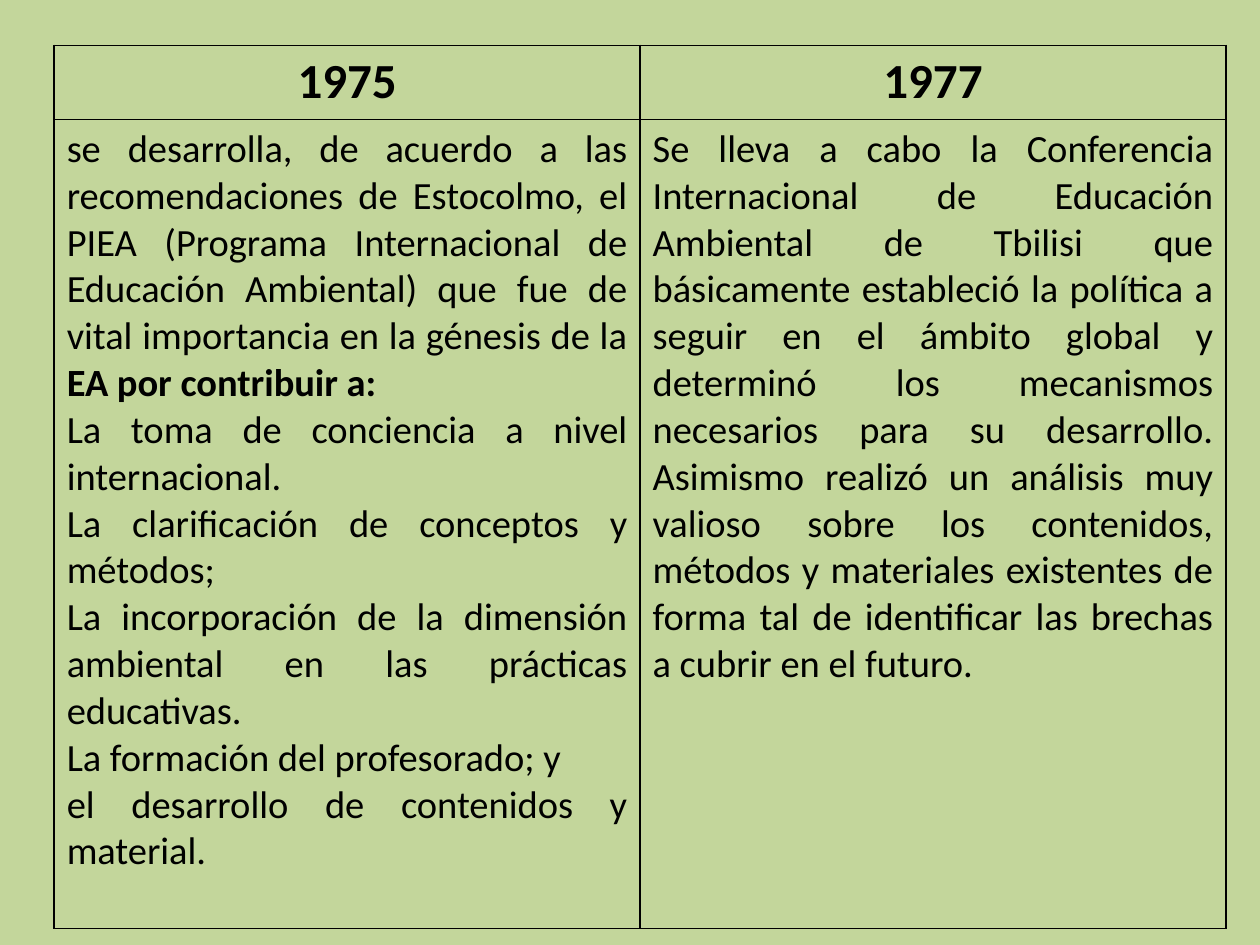
from lxml.etree import SubElement
from pptx import Presentation
from pptx.dml.color import RGBColor
from pptx.enum.text import PP_ALIGN
from pptx.oxml.ns import qn
from pptx.util import Inches, Pt

GREEN = RGBColor(0xC3, 0xD6, 0x9B)
BLACK = RGBColor(0x00, 0x00, 0x00)

HEADINGS = ["1975", "1977"]
# Each cell is a list of paragraphs; each paragraph is a list of (text, bold).
EVENTS_1975 = [
    [("se desarrolla, de acuerdo a las recomendaciones de Estocolmo, el PIEA "
      "(Programa Internacional de Educación Ambiental) que fue de vital "
      "importancia en la génesis de la ", False),
     ("EA por contribuir a:", True)],
    [("La toma de conciencia a nivel internacional.", False)],
    [("La clarificación de conceptos y métodos;", False)],
    [("La incorporación de la dimensión ambiental en las prácticas educativas.", False)],
    [("La formación del profesorado; y", False)],
    [("el desarrollo de contenidos y material.", False)],
]
EVENTS_1977 = [
    [("Se lleva a cabo la Conferencia Internacional de Educación Ambiental de "
      "Tbilisi que básicamente estableció la política a seguir en el ámbito "
      "global y determinó los mecanismos necesarios para su desarrollo. "
      "Asimismo realizó un análisis muy valioso sobre los contenidos, métodos "
      "y materiales existentes de forma tal de identificar las brechas a "
      "cubrir en el futuro.", False)],
]


class TimelineSlide:
    font = "Calibri"
    heading_size = Pt(28)
    body_size = Pt(22)
    border_width = Pt(1)

    def __init__(self, deck):
        self.slide = deck.slides.add_slide(deck.slide_layouts[6])

    def background(self, color):
        fill = self.slide.background.fill
        fill.solid()
        fill.fore_color.rgb = color

    def table(self, left, top, column_widths, row_heights):
        frame = self.slide.shapes.add_table(
            len(row_heights), len(column_widths), Inches(left), Inches(top),
            Inches(sum(column_widths)), Inches(sum(row_heights)))
        table = frame.table
        table.first_row = table.horz_banding = False
        for column, width in zip(table.columns, column_widths):
            column.width = Inches(width)
        for row, height in zip(table.rows, row_heights):
            row.height = Inches(height)
        for cell in table.iter_cells():
            self.borders(cell)
            cell.fill.background()
        return table

    def borders(self, cell):
        properties = cell._tc.get_or_add_tcPr()
        for side in ("a:lnL", "a:lnR", "a:lnT", "a:lnB"):
            line = SubElement(properties, qn(side), w=str(self.border_width))
            fill = SubElement(line, qn("a:solidFill"))
            SubElement(fill, qn("a:srgbClr"), val=str(BLACK))

    def cell_text(self, cell, paragraphs, size, alignment):
        frame = cell.text_frame
        for index, spans in enumerate(paragraphs):
            para = frame.add_paragraph() if index else frame.paragraphs[0]
            para.alignment = alignment
            for text, bold in spans:
                span = para.add_run()
                span.text = text
                span.font.name = self.font
                span.font.size = size
                span.font.bold = bold
                span.font.color.rgb = BLACK


def main():
    deck = Presentation()
    deck.slide_width, deck.slide_height = Inches(10), Inches(7.5)
    page = TimelineSlide(deck)
    page.background(GREEN)
    table = page.table(0.43, 0.36, [4.65, 4.65], [0.59, 6.42])
    for column, (heading, events) in enumerate(zip(HEADINGS, [EVENTS_1975, EVENTS_1977])):
        page.cell_text(table.cell(0, column), [[(heading, True)]],
                       page.heading_size, PP_ALIGN.CENTER)
        page.cell_text(table.cell(1, column), events,
                       page.body_size, PP_ALIGN.JUSTIFY)
    deck.save("out.pptx")


if __name__ == "__main__":
    main()
